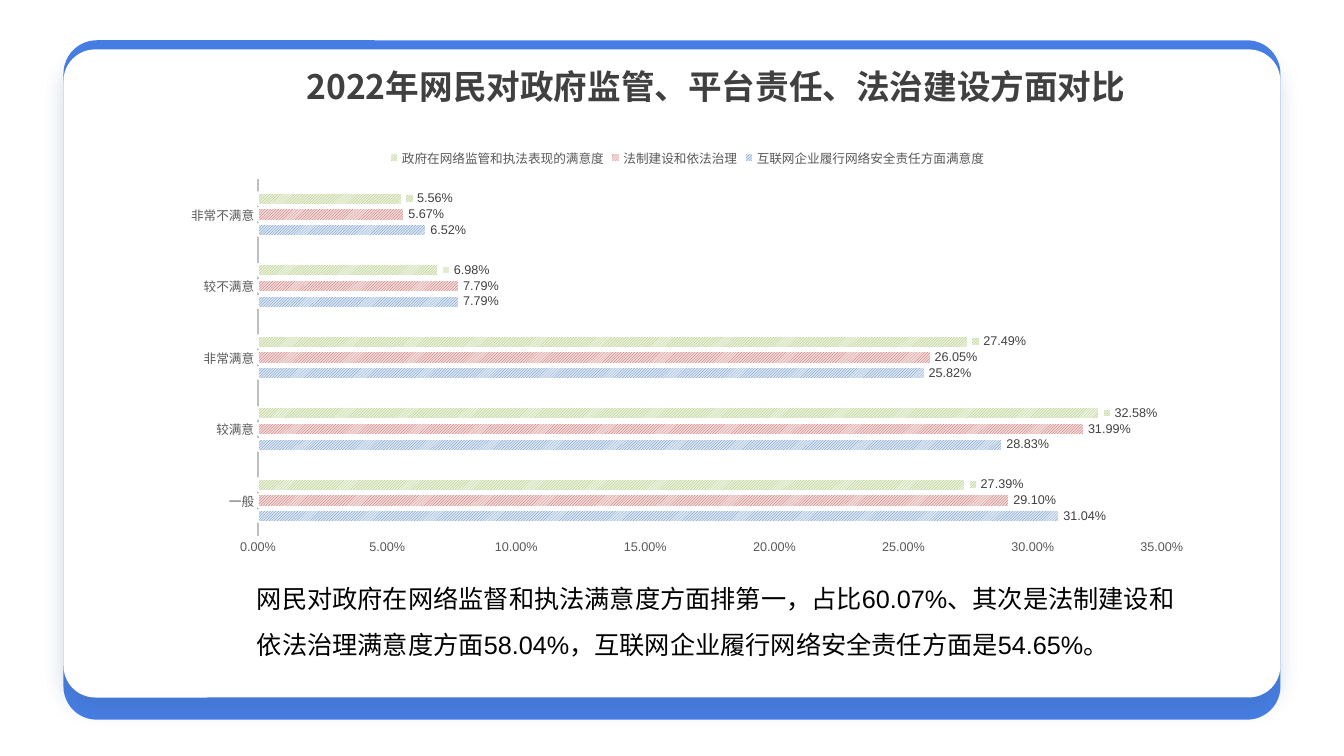
"""Build a slide comparing public satisfaction in three areas with a bar chart."""
from lxml.etree import SubElement as Sub
from pptx import Presentation
from pptx.chart.data import CategoryChartData as Data
from pptx.dml.color import RGBColor as RGB
from pptx.enum.chart import XL_CHART_TYPE as Kind, XL_LABEL_POSITION as Spot
from pptx.enum.chart import XL_LEGEND_POSITION as Side, XL_TICK_MARK as Tick
from pptx.enum.dml import MSO_PATTERN as Pat
from pptx.enum.shapes import MSO_SHAPE as Form
from pptx.enum.text import MSO_ANCHOR as Anchor, PP_ALIGN as Align
from pptx.oxml.ns import qn
from pptx.util import Inches, Pt

WHITE, BLACK = RGB(255, 255, 255), RGB(0, 0, 0)
BLUE, DARK = RGB(0x47, 0x7E, 0xE5), RGB(0x40, 0x40, 0x40)
GREY, PALE = RGB(0x59, 0x59, 0x59), RGB(0xBF, 0xBF, 0xBF)
SANS, HAN = "Arial", "Noto Sans CJK SC"
RATE = "0.00%"

TITLE = "2022年网民对政府监管、平台责任、法治建设方面对比"
NOTE = ("网民对政府在网络监督和执法满意度方面排第一，占比60.07%、"
        "其次是法制建设和依法治理满意度方面58.04%，"
        "互联网企业履行网络安全责任方面是54.65%。")
CATS = ["一般", "较满意", "非常满意", "较不满意", "非常不满意"]
ROWS = [
    ("互联网企业履行网络安全责任方面满意度", [0.3104, 0.2883, 0.2582, 0.0779, 0.0652],
     RGB(0x4F, 0x81, 0xBD), RGB(0xDC, 0xE6, 0xF2), False),
    ("法制建设和依法治理", [0.291, 0.3199, 0.2605, 0.0779, 0.0567],
     RGB(0xC0, 0x50, 0x4D), RGB(0xF2, 0xDC, 0xDB), False),
    ("政府在网络监管和执法表现的满意度", [0.2739, 0.3258, 0.2749, 0.0698, 0.0556],
     RGB(0x9B, 0xBB, 0x59), RGB(0xEB, 0xF1, 0xDE), True),
]
CARDS = [((0.63, 0.4, 12.07, 6.74), BLUE), ((0.63, 0.49, 12.07, 6.43), WHITE)]
HEAD_AT = (1.92, 0.6, 10.36, 0.5)
CHART_AT = (1.69, 1.36, 10.25, 4.23)
NOTE_AT = (2.45, 5.59, 9.31, 1.01)


def place(box):
    return [Inches(n) for n in box]


def style(font, size, color, name=SANS):
    font.size, font.name = Pt(size), name
    font.color.rgb = color


def write(frame, text, size, color, name):
    frame.word_wrap = True
    para = frame.paragraphs[0]
    run = para.add_run()
    run.text = text
    style(run.font, size, color, name)
    Sub(run.font._element, qn("a:ea"), typeface=HAN)
    return para, run


def add_card(slide, box, color):
    card = slide.shapes.add_shape(Form.ROUNDED_RECTANGLE, *place(box))
    card.adjustments[0] = 0.049
    card.fill.solid()
    card.fill.fore_color.rgb = color
    card.line.fill.background()
    card.shadow.inherit = False
    return card


def add_glow(card):
    glow = Sub(card._element.spPr.find(qn("a:effectLst")), qn("a:outerShdw"),
               blurRad=str(Pt(16)), dist=str(Pt(8)), dir="5400000",
               algn="t", rotWithShape="0")
    tint = Sub(glow, qn("a:srgbClr"), val="376092")
    Sub(tint, qn("a:alpha"), val="23000")


def add_bars(slide):
    data = Data(number_format=RATE)
    data.categories = CATS
    for name, vals, *_ in ROWS:
        data.add_series(name, vals)
    chart = slide.shapes.add_chart(Kind.BAR_CLUSTERED, *place(CHART_AT), data).chart
    style(chart.font, 10, BLACK)
    chart.has_title = False
    chart.has_legend = True
    chart.legend.position = Side.TOP
    chart.legend.include_in_layout = False
    style(chart.legend.font, 9, GREY)
    plot = chart.plots[0]
    plot.gap_width, plot.overlap = 223, -28
    plot.vary_by_categories = False

    for axis in (chart.category_axis, chart.value_axis):
        axis.major_tick_mark = axis.minor_tick_mark = Tick.NONE
        axis.has_major_gridlines = False
        style(axis.tick_labels.font, 9, GREY)
    line = chart.category_axis.format.line
    line.color.rgb, line.width = PALE, Pt(1.5)
    scale = chart.value_axis
    scale.format.line.fill.background()
    scale.minimum_scale, scale.maximum_scale, scale.major_unit = 0, 0.35, 0.05
    scale.tick_labels.number_format = RATE
    scale.tick_labels.number_format_is_linked = False

    for bar, (_, _, fore, back, key) in zip(plot.series, ROWS):
        bar.invert_if_negative = False
        fill = bar.format.fill
        fill.patterned()
        fill.pattern = Pat.LIGHT_UPWARD_DIAGONAL
        fill.fore_color.rgb, fill.back_color.rgb = fore, back
        bar.format.line.color.rgb = WHITE
        bar.format.line.width = Pt(1.5)
        tags = bar.data_labels
        tags.show_value, tags.show_legend_key = True, key
        tags.position = Spot.OUTSIDE_END
        tags.number_format, tags.number_format_is_linked = RATE, False
        style(tags.font, 9, DARK)


def main():
    deck = Presentation()
    deck.slide_width, deck.slide_height = Inches(13.33), Inches(7.5)
    slide = deck.slides.add_slide(deck.slide_layouts[5])
    cards = [add_card(slide, *card) for card in CARDS]
    add_glow(cards[-1])

    head = slide.shapes.title
    head.left, head.top, head.width, head.height = place(HEAD_AT)
    head.text_frame.vertical_anchor = Anchor.MIDDLE
    para, run = write(head.text_frame, TITLE, 24, DARK, HAN)
    para.alignment, run.font.bold = Align.CENTER, True
    slide.shapes._spTree.append(head._element)

    add_bars(slide)
    note = slide.shapes.add_textbox(*place(NOTE_AT))
    para, _ = write(note.text_frame, NOTE, 18, BLACK, SANS)
    para.line_spacing = 1.5
    deck.save("out.pptx")


if __name__ == "__main__":
    main()
